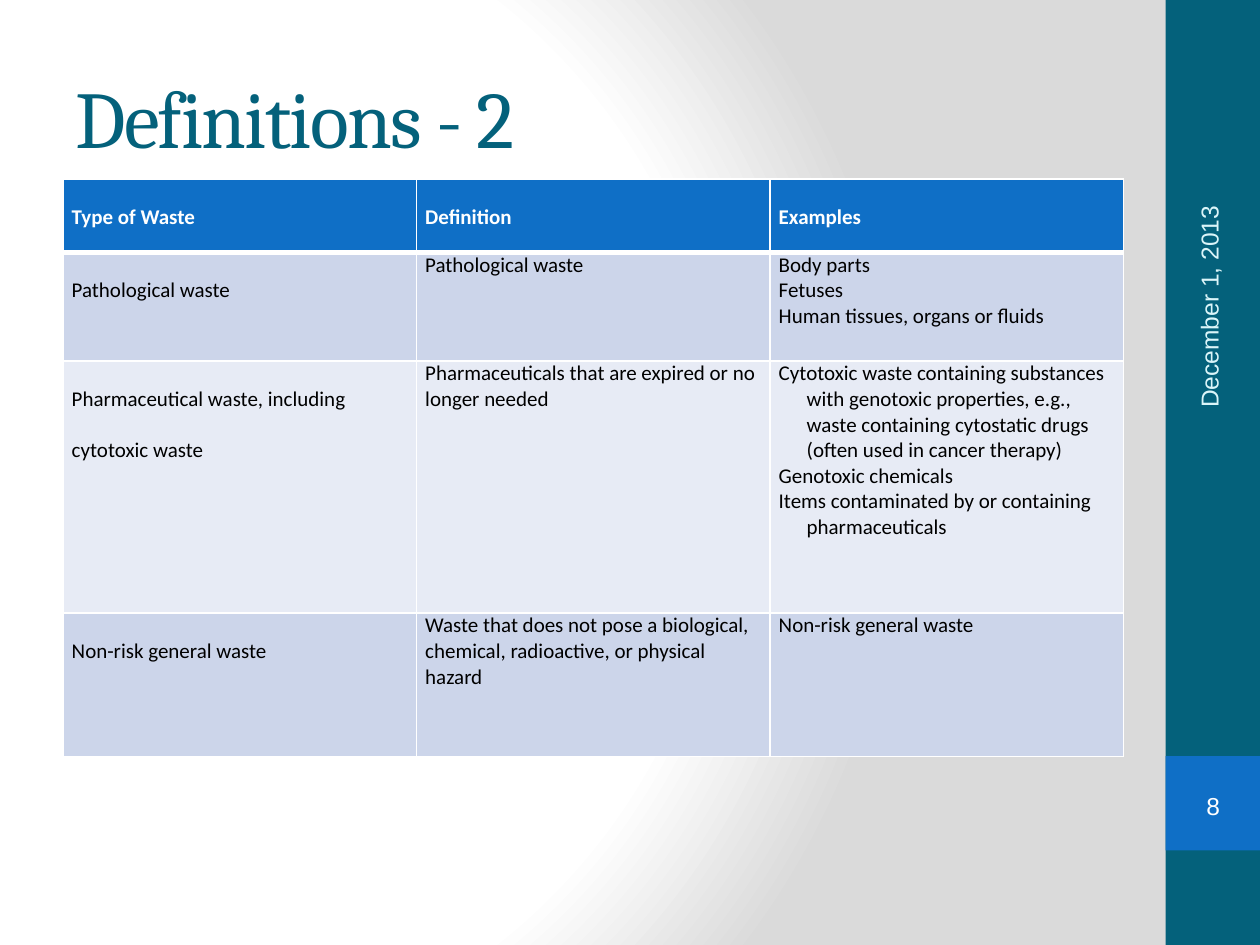
import pptx
import pptx.dml.color
import pptx.enum.shapes
import pptx.enum.text
import pptx.oxml
import pptx.oxml.ns
import pptx.util
from lxml import etree

Pt = pptx.util.Pt
SHAPE = pptx.enum.shapes.MSO_SHAPE
MIDDLE = pptx.enum.text.MSO_ANCHOR.MIDDLE
ALIGN = pptx.enum.text.PP_ALIGN
qn = pptx.oxml.ns.qn

TEAL, BLUE, WHITE, BLACK = "04617B", "0F6FC6", "FFFFFF", "000000"
TITLE = "Definitions - 2"
DATE = "December 1, 2013"
NUMBER = "8"
HEADER = ["Type of Waste", "Definition", "Examples"]
# waste type, definition, examples
WASTES = [
    ("Pathological waste", "Pathological waste",
     ["Body parts", "Fetuses", "Human tissues, organs or fluids"]),
    ("Pharmaceutical waste, including cytotoxic waste",
     "Pharmaceuticals that are expired or no longer needed",
     ["Cytotoxic waste containing substances with genotoxic properties, e.g., "
      "waste containing cytostatic drugs (often used in cancer therapy)",
      "Genotoxic chemicals",
      "Items contaminated by or containing pharmaceuticals"]),
    ("Non-risk general waste",
     "Waste that does not pose a biological, chemical, radioactive, or physical hazard",
     ["Non-risk general waste"]),
]
BANDS = ["CCD5EA", "E7EBF5"]
COL_WIDTH = 202
ROW_HEIGHTS = [42, 62, 144, 82]
BACKGROUND = """
<p:bg xmlns:p="http://schemas.openxmlformats.org/presentationml/2006/main"
      xmlns:a="http://schemas.openxmlformats.org/drawingml/2006/main">
  <p:bgPr><a:gradFill rotWithShape="1"><a:gsLst>
    <a:gs pos="0"><a:srgbClr val="FFFFFF"/></a:gs>
    <a:gs pos="75000"><a:srgbClr val="FFFFFF"/></a:gs>
    <a:gs pos="100000"><a:srgbClr val="DADADA"/></a:gs>
  </a:gsLst><a:path path="circle">
    <a:fillToRect l="20000" t="50000" r="100000" b="50000"/>
  </a:path></a:gradFill><a:effectLst/></p:bgPr>
</p:bg>"""


def rgb(value):
    return pptx.dml.color.RGBColor.from_string(value)


def add_run(p, text, size, font, color, bold=False):
    r = p.add_run()
    r.text = text
    r.font.size, r.font.name, r.font.bold = Pt(size), font, bold
    r.font.color.rgb = rgb(color)
    return r


def add_block(s, kind, left, top, width, height, fill=None):
    sp = s.shapes.add_shape(kind, Pt(left), Pt(top), Pt(width), Pt(height))
    sp.shadow.inherit = False
    sp.line.fill.background()
    if fill:
        sp.fill.solid()
        sp.fill.fore_color.rgb = rgb(fill)
    else:
        sp.fill.background()
    return sp


def set_borders(cell, bottom):
    """White lines round the cell; they must come before its fill."""
    tcPr = cell._tc.get_or_add_tcPr()
    for i, (side, width) in enumerate(
            [("lnL", 1), ("lnR", 1), ("lnT", 1), ("lnB", bottom)]):
        ln = etree.Element(qn(f"a:{side}"), w=str(Pt(width)))
        fill = etree.SubElement(ln, qn("a:solidFill"))
        etree.SubElement(fill, qn("a:srgbClr"), val=WHITE)
        tcPr.insert(i, ln)


def fill_cell(cell, texts, fill, color=BLACK, bold=False, spacing=1, hang=0, bottom=1):
    cell.margin_left = cell.margin_right = Pt(5)
    cell.margin_top = cell.margin_bottom = 0
    cell.fill.solid()
    cell.fill.fore_color.rgb = rgb(fill)
    set_borders(cell, bottom)
    tf = cell.text_frame
    for i, text in enumerate(texts):
        p = tf.add_paragraph() if i else tf.paragraphs[0]
        p.line_spacing = float(spacing)
        if hang:
            pPr = p._p.get_or_add_pPr()
            pPr.set("marL", str(Pt(hang)))
            pPr.set("indent", str(-Pt(hang)))
        add_run(p, text, 12, "Calibri", color, bold)


def add_waste_table(s):
    rows, cols = len(WASTES) + 1, len(HEADER)
    table = s.shapes.add_table(rows, cols, Pt(36), Pt(102.24),
                               Pt(COL_WIDTH * cols), Pt(sum(ROW_HEIGHTS))).table
    for col in table.columns:
        col.width = Pt(COL_WIDTH)
    for row, height in zip(table.rows, ROW_HEIGHTS):
        row.height = Pt(height)
    for c, text in enumerate(HEADER):
        fill_cell(table.cell(0, c), [text], BLUE, WHITE, True, spacing=2, bottom=3)
    for r, (waste, definition, examples) in enumerate(WASTES, 1):
        band = BANDS[(r - 1) % 2]
        fill_cell(table.cell(r, 0), [waste], band, spacing=2)
        fill_cell(table.cell(r, 1), [definition], band)
        fill_cell(table.cell(r, 2), examples, band, hang=16 if len(examples) > 1 else 0)


def main():
    prs = pptx.Presentation()
    prs.slide_width, prs.slide_height = Pt(720), Pt(540)
    s = prs.slides.add_slide(prs.slide_layouts[5])
    s.element.cSld.insert(0, pptx.oxml.parse_xml(BACKGROUND))

    add_block(s, SHAPE.RECTANGLE, 666, 0, 54, 540, TEAL)
    add_block(s, SHAPE.RECTANGLE, 666, 432, 54, 54, BLUE)

    title = s.shapes.title
    title.left, title.top, title.width, title.height = Pt(36), Pt(21.6), Pt(600), Pt(90)
    title.text_frame.vertical_anchor = MIDDLE
    p = title.text_frame.paragraphs[0]
    p.alignment = ALIGN.LEFT
    r = add_run(p, TITLE, 46, "Cambria", TEAL)
    r.font._element.set("spc", "-100")

    add_waste_table(s)

    date = s.shapes.add_textbox(Pt(594.72), Pt(129.6), Pt(192.24), Pt(28.8))
    date.rotation = 270
    tf = date.text_frame
    tf.word_wrap = True
    tf.vertical_anchor = MIDDLE
    add_run(tf.paragraphs[0], DATE, 14, "Arial", "DBF5F9")

    number = add_block(s, SHAPE.DOUBLE_BRACKET, 671.76, 444.96, 43.2, 30.96)
    number.adjustments[0] = 0.18
    tf = number.text_frame
    tf.margin_left = tf.margin_right = tf.margin_top = tf.margin_bottom = 0
    tf.vertical_anchor = MIDDLE
    tf.paragraphs[0].alignment = ALIGN.CENTER
    add_run(tf.paragraphs[0], NUMBER, 14, "Arial", WHITE)

    prs.save("out.pptx")


if __name__ == "__main__":
    main()
